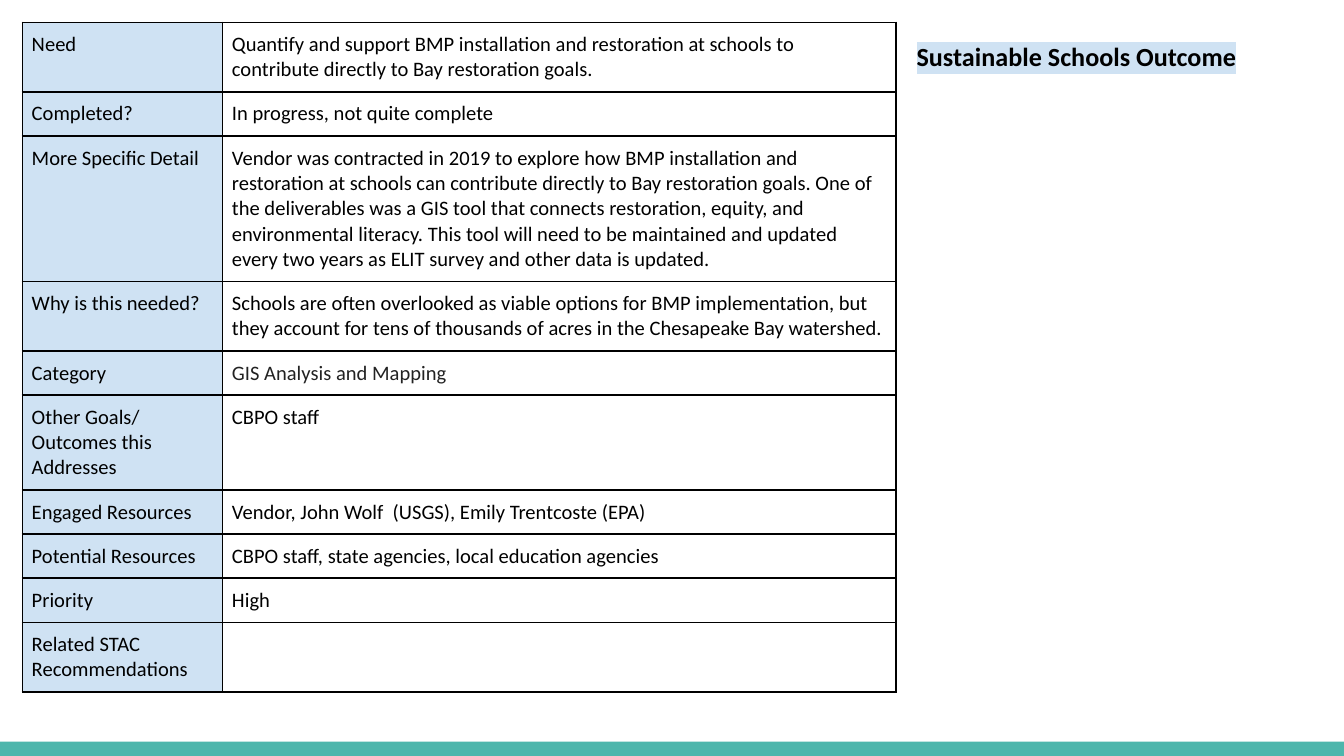
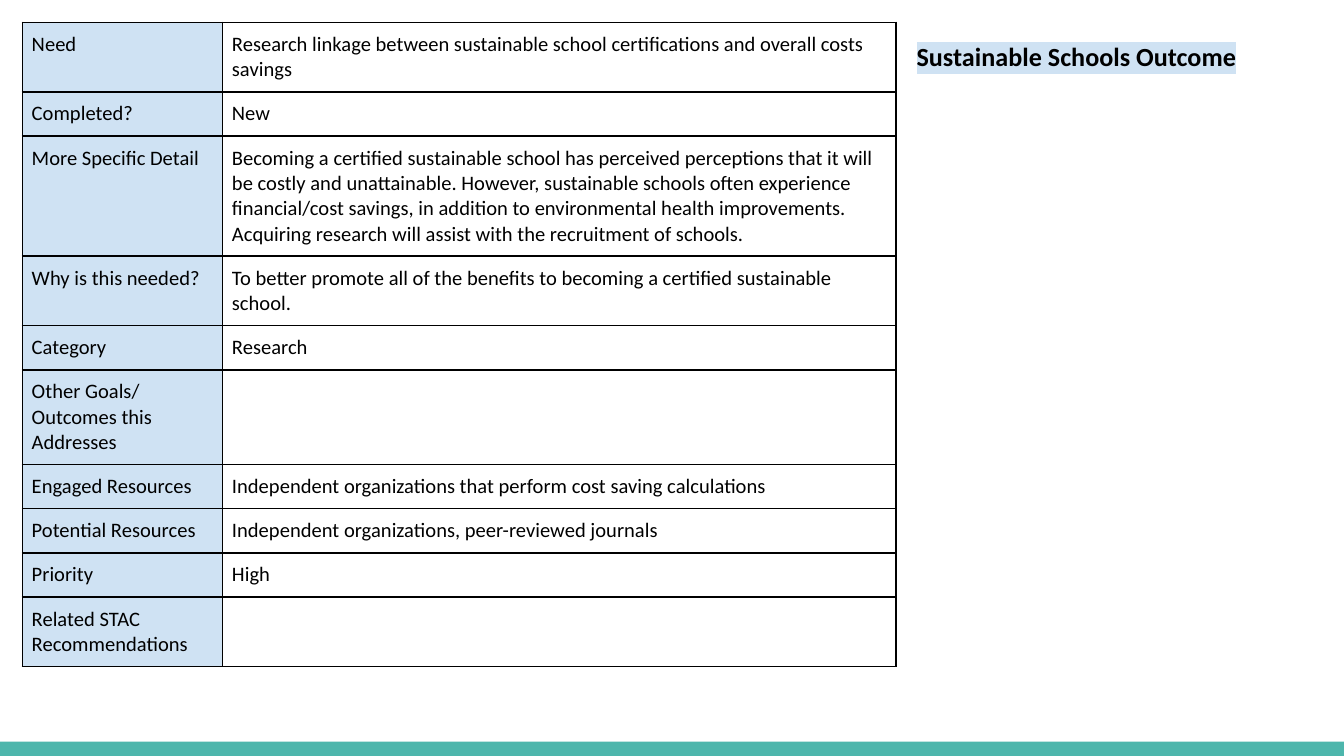
from lxml.etree import SubElement, Element
from pptx import Presentation
from pptx.dml.color import RGBColor
from pptx.enum.shapes import MSO_SHAPE as Shape
from pptx.enum.text import MSO_ANCHOR as Anchor, MSO_AUTO_SIZE as AutoSize, PP_ALIGN as Align
from pptx.oxml.ns import qn
from pptx.util import Inches, Pt

WIDTH, HEIGHT = 10, 5.625
BLACK, CHARCOAL, PALE_BLUE, TEAL = "000000", "222222", "CFE2F3", "4DB6AC"
FONT = "Calibri"
MARGIN = WIDTH / 60
PANEL = 0.328 * WIDTH
COLUMNS = (0.149 * WIDTH, 0.501 * WIDTH)
TABLE_BOX = (MARGIN, MARGIN, PANEL, PANEL)
HEADING_BOX = (0.672 * WIDTH, MARGIN, PANEL, PANEL)
BAND_BOX = (0, 0.981 * HEIGHT, WIDTH, 0.019 * HEIGHT)
SIDES = ("left", "top", "width", "height")
HEADING = "Sustainable Schools Outcome"

LABELS = (
    "Need", "Completed?", "More Specific Detail", "Why is this needed?", "Category",
    "Other Goals/ Outcomes this Addresses", "Engaged Resources", "Potential Resources",
    "Priority", "Related STAC Recommendations",
)
NEEDS = (
    {
        "Need": "Quantify and support BMP installation and restoration at schools to "
                "contribute directly to Bay restoration goals.",
        "Completed?": "In progress, not quite complete",
        "More Specific Detail":
            "Vendor was contracted in 2019 to explore how BMP installation and restoration "
            "at schools can contribute directly to Bay restoration goals. One of the "
            "deliverables was a GIS tool that connects restoration, equity, and "
            "environmental literacy. This tool will need to be maintained and updated "
            "every two years as ELIT survey and other data is updated.",
        "Why is this needed?":
            "Schools are often overlooked as viable options for BMP implementation, but they "
            "account for tens of thousands of acres in the Chesapeake Bay watershed.",
        "Category": "GIS Analysis and Mapping",
        "Other Goals/ Outcomes this Addresses": "CBPO staff",
        "Engaged Resources": "Vendor, John Wolf  (USGS), Emily Trentcoste (EPA)",
        "Potential Resources": "CBPO staff, state agencies, local education agencies",
        "Priority": "High",
    },
    {
        "Need": "Research linkage between sustainable school certifications and overall "
                "costs savings",
        "Completed?": "New",
        "More Specific Detail":
            "Becoming a certified sustainable school has perceived perceptions that it will "
            "be costly and unattainable. However, sustainable schools often experience "
            "financial/cost savings, in addition to environmental health improvements. "
            "Acquiring research will assist with the recruitment of schools.",
        "Why is this needed?":
            "To better promote all of the benefits to becoming a certified sustainable school.",
        "Category": "Research",
        "Engaged Resources": "Independent organizations that perform cost saving calculations",
        "Potential Resources": "Independent organizations, peer-reviewed journals",
        "Priority": "High",
    },
)
TEXT_COLORS = {"GIS Analysis and Mapping": CHARCOAL}


def color(hex_value):
    """Turn a hex string into a colour."""
    return RGBColor.from_string(hex_value)


def apply(target, values):
    """Set each named attribute of the target."""
    for name, value in values.items():
        setattr(target, name, value)


def lengths(box):
    """Convert a box in inches to slide lengths."""
    return [Inches(value) for value in box]


def insets(size):
    """Give equal margins for all four sides."""
    return {f"margin_{side}": Inches(size) for side in ("left", "top", "right", "bottom")}


def format_font(font, size, hex_value, bold=False):
    """Apply the shared typeface with a size, colour and weight."""
    apply(font, {"name": FONT, "size": Pt(size), "bold": bold})
    font.color.rgb = color(hex_value)


def add_borders(cell):
    """Draw thin black lines around a cell."""
    properties = cell._tc.get_or_add_tcPr()
    for side in ("lnL", "lnR", "lnT", "lnB"):
        line = SubElement(properties, qn(f"a:{side}"), w=str(Pt(1)))
        SubElement(SubElement(line, qn("a:solidFill")), qn("a:srgbClr"), val=BLACK)


def fill_cell(cell, text, background=None):
    """Write and format one table cell."""
    add_borders(cell)
    apply(cell, {"text": text, "vertical_anchor": Anchor.TOP, **insets(0.07)})
    format_font(cell.text_frame.paragraphs[0].font, 11, TEXT_COLORS.get(text, BLACK))
    for run in cell.text_frame.paragraphs[0].runs:
        format_font(run.font, 11, TEXT_COLORS.get(text, BLACK))
    if background:
        cell.fill.solid()
        cell.fill.fore_color.rgb = color(background)
    else:
        cell.fill.background()


def add_need_table(slide, box, need):
    """Add the two-column table, whose rows grow to fit their text."""
    frame = slide.shapes.add_table(len(LABELS), len(COLUMNS), *lengths(box))
    table = frame.table
    apply(table, {"first_row": False, "horz_banding": False})
    for column, width in zip(table.columns, COLUMNS):
        column.width = Inches(width)
    for row, label in zip(table.rows, LABELS):
        row.height = Inches(0.01)
        fill_cell(row.cells[0], label, PALE_BLUE)
        fill_cell(row.cells[1], need.get(label, ""))
    apply(frame, dict(zip(SIDES, lengths(box))))


def add_heading(slide, box):
    """Place the highlighted heading in the title placeholder."""
    title = slide.shapes.title
    apply(title, dict(zip(SIDES, lengths(box))))
    apply(title.text_frame, {"text": HEADING, "word_wrap": True, "auto_size": AutoSize.NONE,
                             "vertical_anchor": Anchor.TOP, **insets(0.1)})
    paragraph = title.text_frame.paragraphs[0]
    apply(paragraph, {"alignment": Align.LEFT, "line_spacing": 1.15})
    run = paragraph.runs[0]
    format_font(run.font, 14, BLACK, bold=True)
    highlight = Element(qn("a:highlight"))
    SubElement(highlight, qn("a:srgbClr"), val=PALE_BLUE)
    run._r.rPr.find(qn("a:solidFill")).addnext(highlight)


def add_band(slide, box):
    """Add the teal band at the foot of the slide."""
    band = slide.shapes.add_shape(Shape.RECTANGLE, *lengths(box))
    band.shadow.inherit = False
    band.fill.solid()
    band.fill.fore_color.rgb = color(TEAL)
    band.line.fill.background()


def add_need_slide(presentation, need):
    """Build one slide describing a need."""
    slide = presentation.slides.add_slide(presentation.slide_layouts.get_by_name("Title Only"))
    add_band(slide, BAND_BOX)
    add_need_table(slide, TABLE_BOX, need)
    add_heading(slide, HEADING_BOX)


def main():
    """Build and save the presentation."""
    presentation = Presentation()
    apply(presentation, {"slide_width": Inches(WIDTH), "slide_height": Inches(HEIGHT)})
    for need in NEEDS:
        add_need_slide(presentation, need)
    presentation.save("out.pptx")


if __name__ == "__main__":
    main()
